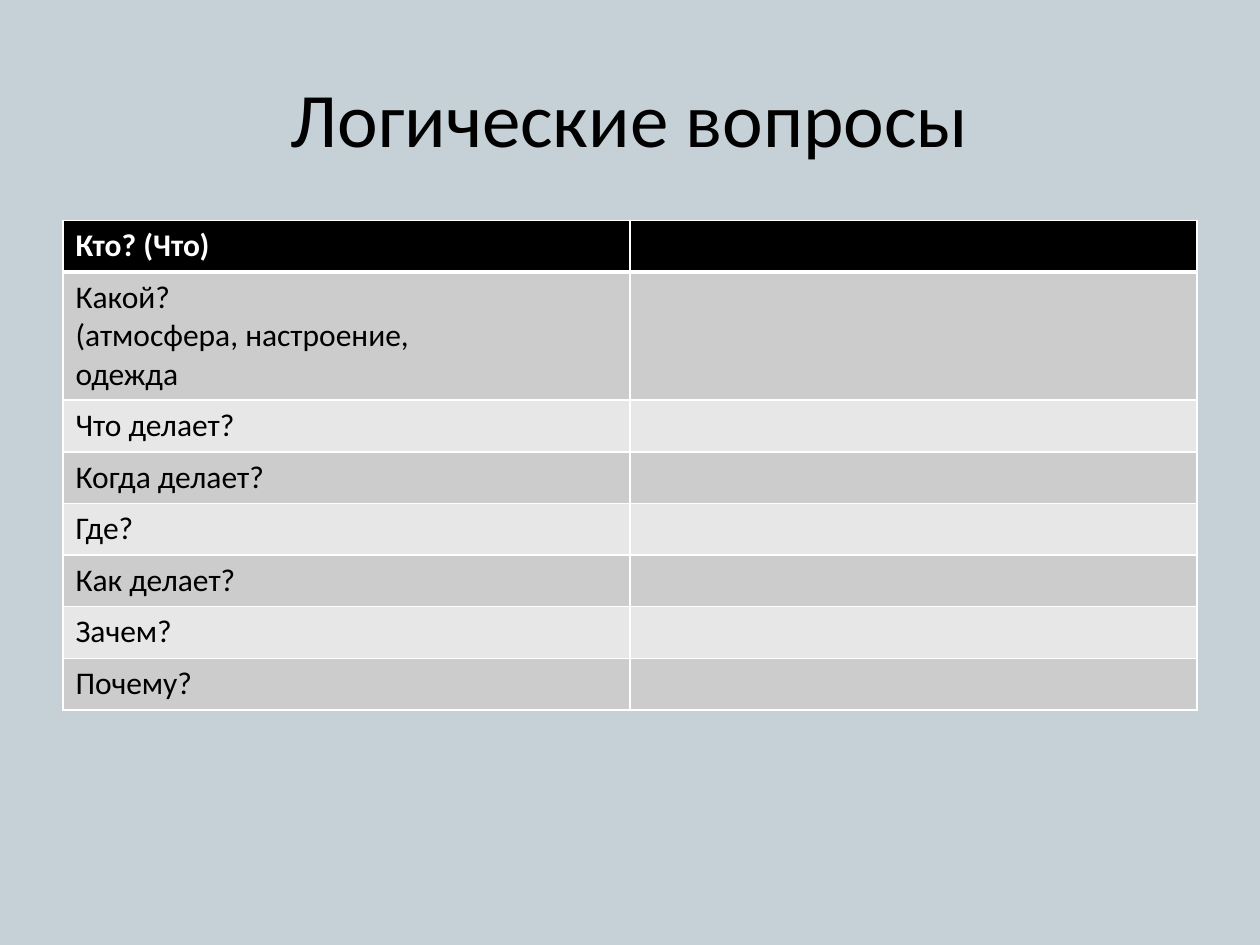
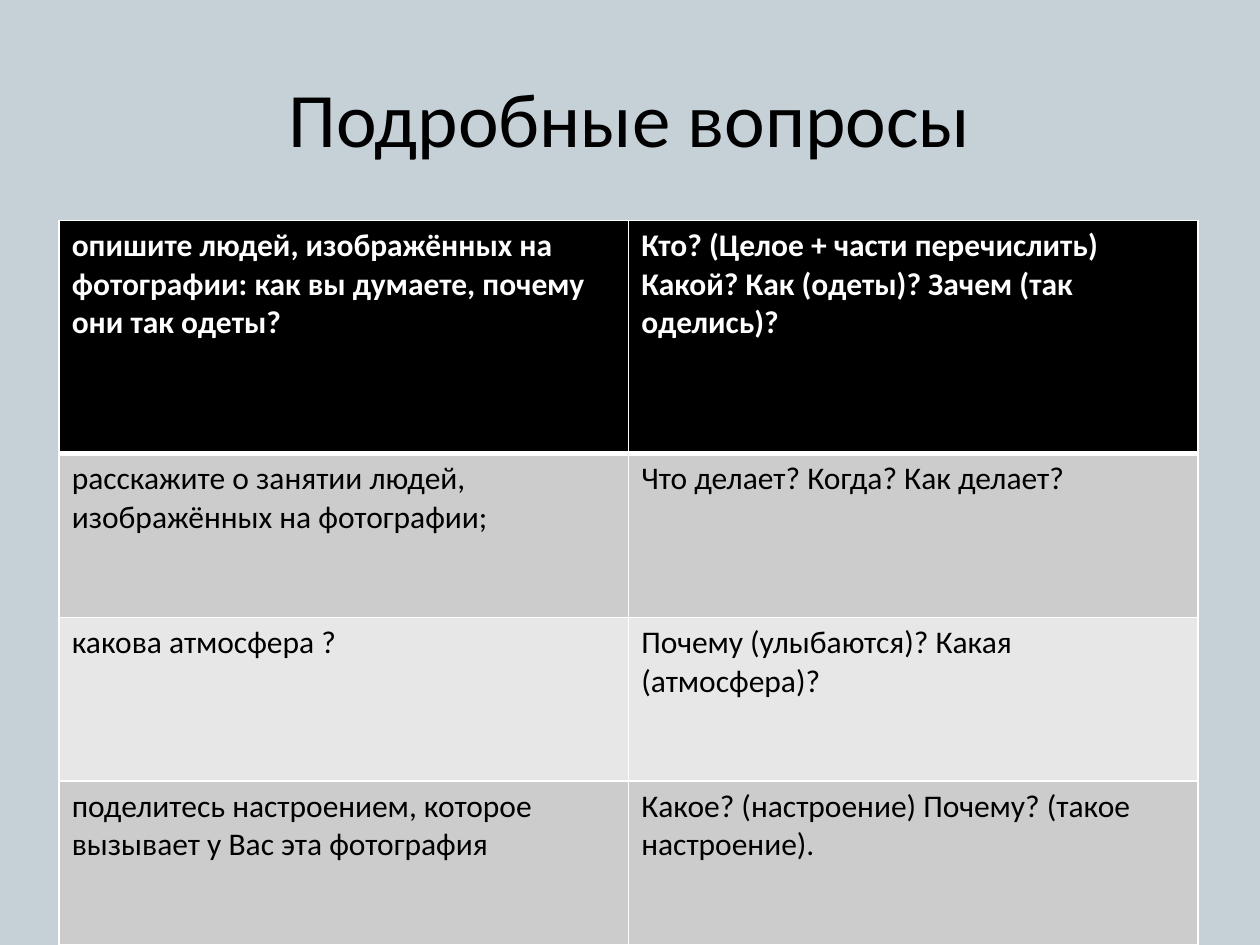
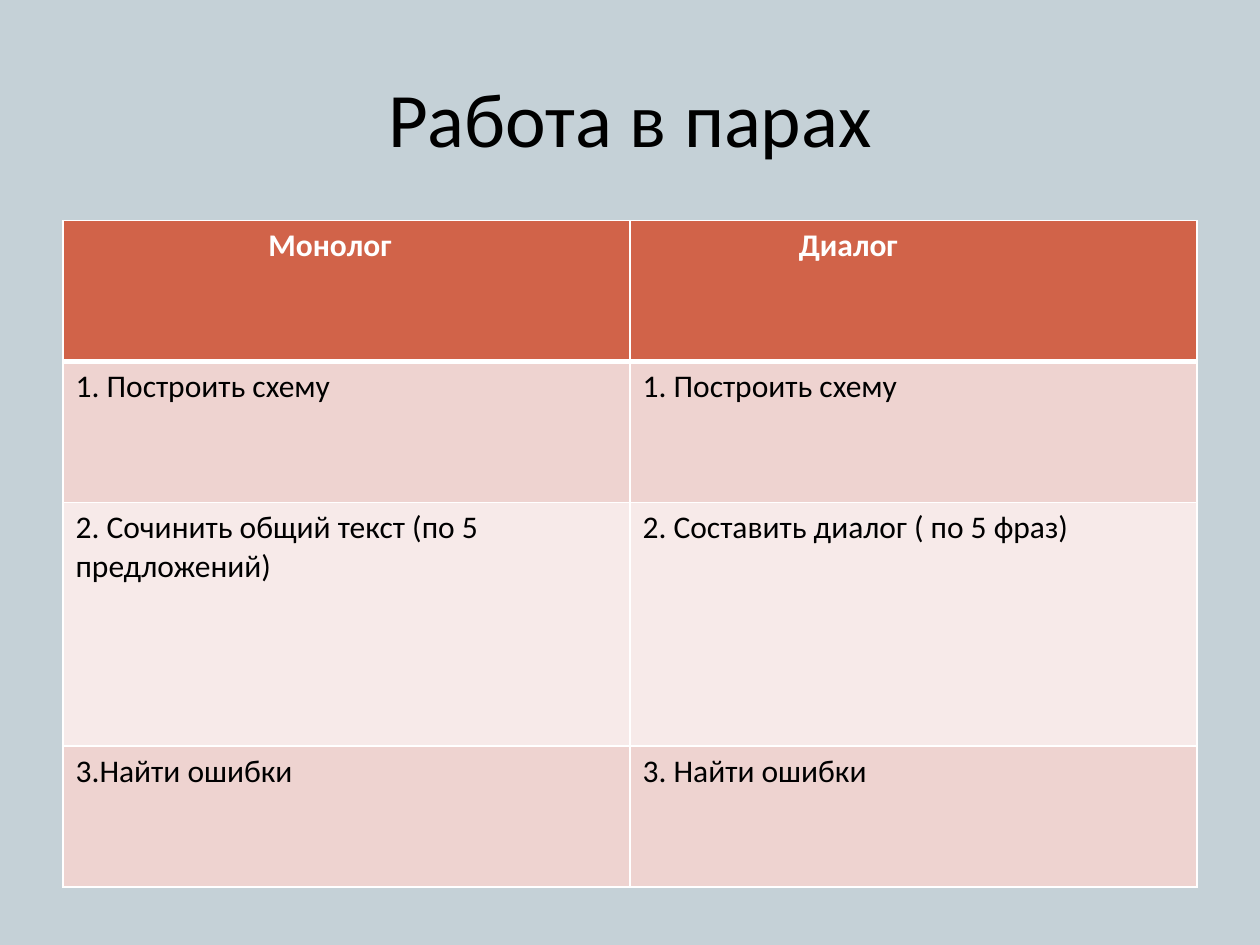
from dataclasses import dataclass

from lxml import etree
from pptx import Presentation
from pptx.dml.color import RGBColor
from pptx.enum.text import MSO_ANCHOR, PP_ALIGN
from pptx.oxml.ns import qn
from pptx.util import Inches, Pt


# Shared look
@dataclass(frozen=True)
class Theme:
    font: str = "Calibri"
    background: str = "C5D1D7"
    text: str = "000000"
    light: str = "FFFFFF"
    title_size: int = 44
    table_size: int = 18
    border: int = 1
    header_border: int = 3


@dataclass(frozen=True)
class Palette:
    header: str
    odd: str
    even: str


@dataclass(frozen=True)
class TableSlide:
    title: str
    palette: Palette
    rows: tuple[tuple[str, str], ...]
    row_heights: tuple[float, ...]
    left: float = 0.5
    column_width: float = 4.5
    header_indents: tuple[float, float] = (0, 0)


THEME = Theme()
GREY = Palette("000000", "CCCCCC", "E7E7E7")
RED = Palette("D16349", "EED3D0", "F7EAE9")
TABLE_TOP = 1.75
CELL_MARGIN = 0.1

# Slide content
SLIDES = (
    TableSlide(
        "Логические вопросы",
        GREY,
        (
            ("Кто? (Что)", ""),
            ("Какой?\n(атмосфера, настроение,\nодежда", ""),
            ("Что делает?", ""),
            ("Когда делает?", ""),
            ("Где?", ""),
            ("Как делает?", ""),
            ("Зачем?", ""),
            ("Почему?", ""),
        ),
        (0.41,) * 8,
    ),
    TableSlide(
        "Подробные вопросы",
        GREY,
        (
            ("опишите людей, изображённых на фотографии: как вы думаете, почему они так одеты?",
             "Кто? (Целое + части перечислить) Какой? Как (одеты)? Зачем (так оделись)?"),
            ("расскажите о занятии людей, изображённых на фотографии;",
             "Что делает? Когда? Как делает?"),
            ("какова атмосфера ?",
             "Почему (улыбаются)? Какая (атмосфера)?"),
            ("поделитесь настроением, которое вызывает у Вас эта фотография",
             "Какое? (настроение) Почему? (такое настроение)."),
        ),
        (1.85, 1.3, 1.3, 1.3),
        left=0.47,
        column_width=4.52,
    ),
    TableSlide(
        "Работа в парах",
        RED,
        (
            ("Монолог", "Диалог"),
            ("1. Построить схему", "1. Построить схему"),
            ("2. Сочинить общий текст (по 5 предложений)", "2. Составить диалог ( по 5 фраз)"),
            ("3.Найти ошибки", "3. Найти ошибки"),
        ),
        (1.12, 1.12, 1.93, 1.12),
        header_indents=(1.53, 1.24),
    ),
)


def format_text(text_frame, size: int, color: str, bold: bool = False) -> None:
    for paragraph in text_frame.paragraphs:
        for run in paragraph.runs:
            run.font.name = THEME.font
            run.font.size = Pt(size)
            run.font.bold = bold
            run.font.color.rgb = RGBColor.from_string(color)


def add_borders(cell, top: int, bottom: int) -> None:
    properties = cell._tc.get_or_add_tcPr()
    widths = {"lnL": THEME.border, "lnR": THEME.border, "lnT": top, "lnB": bottom}
    for side, width in widths.items():
        line = etree.SubElement(properties, qn(f"a:{side}"), w=str(Pt(width)))
        fill = etree.SubElement(line, qn("a:solidFill"))
        etree.SubElement(fill, qn("a:srgbClr"), val=THEME.light)


def format_cell(cell, row: int, palette: Palette) -> None:
    is_header = row == 0
    add_borders(
        cell,
        top=THEME.header_border if row == 1 else THEME.border,
        bottom=THEME.header_border if is_header else THEME.border,
    )
    color = palette.header if is_header else palette.odd if row % 2 else palette.even
    cell.fill.solid()
    cell.fill.fore_color.rgb = RGBColor.from_string(color)
    format_text(cell.text_frame, THEME.table_size, THEME.light if is_header else THEME.text, is_header)


def add_title(slide, text: str) -> None:
    title = slide.shapes.title
    title.left, title.top = Inches(0.5), Inches(0.3)
    title.width, title.height = Inches(9), Inches(1.25)
    text_frame = title.text_frame
    text_frame.text = text
    text_frame.vertical_anchor = MSO_ANCHOR.MIDDLE
    text_frame.paragraphs[0].alignment = PP_ALIGN.CENTER
    format_text(text_frame, THEME.title_size, THEME.text)


def add_question_table(slide, content: TableSlide) -> None:
    column_count = len(content.rows[0])
    table = slide.shapes.add_table(
        len(content.rows), column_count,
        Inches(content.left), Inches(TABLE_TOP),
        Inches(content.column_width * column_count), Inches(sum(content.row_heights)),
    ).table
    for row, (height, texts) in enumerate(zip(content.row_heights, content.rows)):
        table.rows[row].height = Inches(height)
        for column, text in enumerate(texts):
            cell = table.cell(row, column)
            cell.text_frame.text = text
            format_cell(cell, row, content.palette)
    for column, indent in enumerate(content.header_indents):
        table.cell(0, column).margin_left = Inches(CELL_MARGIN + indent)


def main() -> None:
    presentation = Presentation()
    presentation.slide_width, presentation.slide_height = Inches(10), Inches(7.5)
    background = presentation.slide_master.background.fill
    background.solid()
    background.fore_color.rgb = RGBColor.from_string(THEME.background)

    title_only = presentation.slide_layouts.get_by_name("Title Only")
    for content in SLIDES:
        slide = presentation.slides.add_slide(title_only)
        add_title(slide, content.title)
        add_question_table(slide, content)
    presentation.save("out.pptx")


if __name__ == "__main__":
    main()
